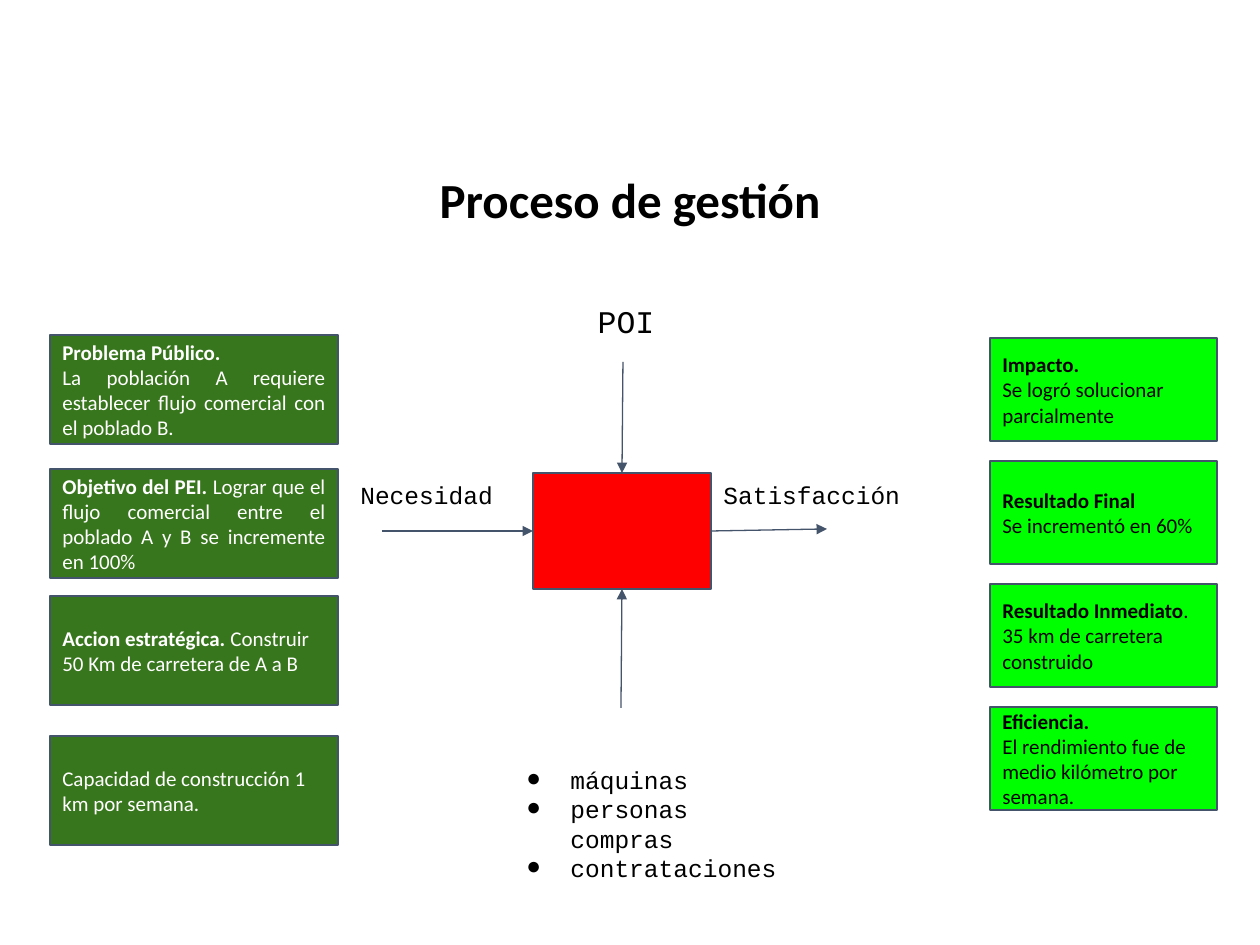
from lxml import etree
from pptx import Presentation
from pptx.dml.color import RGBColor
from pptx.enum.shapes import MSO_CONNECTOR, MSO_SHAPE
from pptx.enum.text import MSO_ANCHOR, PP_ALIGN
from pptx.oxml.ns import qn
from pptx.util import Emu, Pt

SCALE = 914400 / 126
RECTANGLE = MSO_SHAPE.RECTANGLE
STRAIGHT = MSO_CONNECTOR.STRAIGHT
TOP, MIDDLE, BOTTOM = MSO_ANCHOR.TOP, MSO_ANCHOR.MIDDLE, MSO_ANCHOR.BOTTOM
LEFT, CENTER, JUSTIFY = PP_ALIGN.LEFT, PP_ALIGN.CENTER, PP_ALIGN.JUSTIFY
SLATE = "44546A"


def px(*lengths):
    return [Emu(round(length * SCALE)) for length in lengths]


def write(shape, paragraphs, size, font, color, align=LEFT, anchor=TOP, bullet=None):
    frame = shape.text_frame
    frame.word_wrap = True
    frame.vertical_anchor = anchor
    frame.margin_top, frame.margin_bottom = px(13, 13)
    for index, runs in enumerate(paragraphs):
        paragraph = frame.paragraphs[0] if index == 0 else frame.add_paragraph()
        paragraph.alignment = align
        if bullet:
            properties = paragraph._p.get_or_add_pPr()
            indent, hanging = px(63, -44)
            properties.set("marL", str(indent))
            properties.set("indent", str(hanging))
            etree.SubElement(properties, qn("a:buFont")).set("typeface", font)
            etree.SubElement(properties, qn("a:buChar")).set("char", bullet)
        for text, bold in runs:
            run = paragraph.add_run()
            run.text = text
            run.font.size = Pt(size)
            run.font.name = font
            run.font.bold = bold
            run.font.color.rgb = RGBColor.from_string(color)


deck = Presentation()
deck.slide_width, deck.slide_height = px(1260, 945)
slide = deck.slides.add_slide(deck.slide_layouts[6])
shapes = slide.shapes

title = shapes.add_textbox(*px(43, 151, 1174, 91))
write(title, [[("Proceso de gestión", True)]], 28, "Calibri", "000000", CENTER, BOTTOM)
title.text_frame.paragraphs[0].line_spacing = 0.9

plan = [
    (335, JUSTIFY, [
        [("Problema Público.", True)],
        [("La población A requiere establecer flujo comercial con el poblado B.", False)],
    ]),
    (469, JUSTIFY, [[
        ("Objetivo del PEI.", True),
        (" Lograr que el flujo comercial entre el poblado A y B se incremente en 100%", False),
    ]]),
    (596, LEFT, [[
        ("Accion estratégica.", True),
        (" Construir 50 Km de carretera de A a B", False),
    ]]),
    (736, LEFT, [[("Capacidad de construcción 1 km por semana.", False)]]),
]
results = [
    [[("Impacto.", True)], [("Se logró solucionar parcialmente", False)]],
    [[("Resultado Final", True)], [("Se incrementó en 60%", False)]],
    [
        [("Resultado Inmediato", True), (".", False)],
        [("35 km de carretera construido", False)],
    ],
    [[("Eficiencia.", True)], [("El rendimiento fue de medio kilómetro por semana.", False)]],
]
boxes = [(50, top, 288, 109, "38761D", "FFFFFF", align, text) for top, align, text in plan]
boxes.append((533, 473, 178, 116, "FF0000", "000000", LEFT, []))
boxes += [
    (990, 338 + 123 * row, 227, 103, "00FF00", "000000", LEFT, text)
    for row, text in enumerate(results)
]
for left, top, width, height, fill, color, align, text in boxes:
    box = shapes.add_shape(RECTANGLE, *px(left, top, width, height))
    box.shadow.inherit = False
    box.fill.solid()
    box.fill.fore_color.rgb = RGBColor.from_string(fill)
    box.line.color.rgb = RGBColor.from_string(SLATE)
    box.line.width = Pt(0.75)
    write(box, text, 12, "Calibri", color, align, MIDDLE)

flows = [
    (382, 531, 533, 531),
    (711, 531, 827, 529),
    (621, 708, 622, 589),
    (623, 362, 622, 473),
]
for ends in flows:
    arrow = shapes.add_connector(STRAIGHT, *px(*ends))
    arrow.line.color.rgb = RGBColor.from_string(SLATE)
    arrow.line.width = Pt(0.75)
    etree.SubElement(arrow.line._get_or_add_ln(), qn("a:tailEnd")).set("type", "triangle")
    etree.SubElement(arrow._element.spPr, qn("a:effectLst"))

labels = [
    (348, 467, 163, 60, 14, LEFT, None, ["Necesidad"]),
    (711, 467, 210, 53, 14, LEFT, None, ["Satisfacción"]),
    (495, 752, 296, 137, 14, LEFT, "●", ["máquinas", "personas compras", "contrataciones"]),
    (556, 289, 140, 60, 18, CENTER, None, ["POI"]),
]
for left, top, width, height, size, align, bullet, lines in labels:
    label = shapes.add_textbox(*px(left, top, width, height))
    paragraphs = [[(line, False)] for line in lines]
    write(label, paragraphs, size, "Courier New", "000000", align, TOP, bullet)

deck.save("out.pptx")
